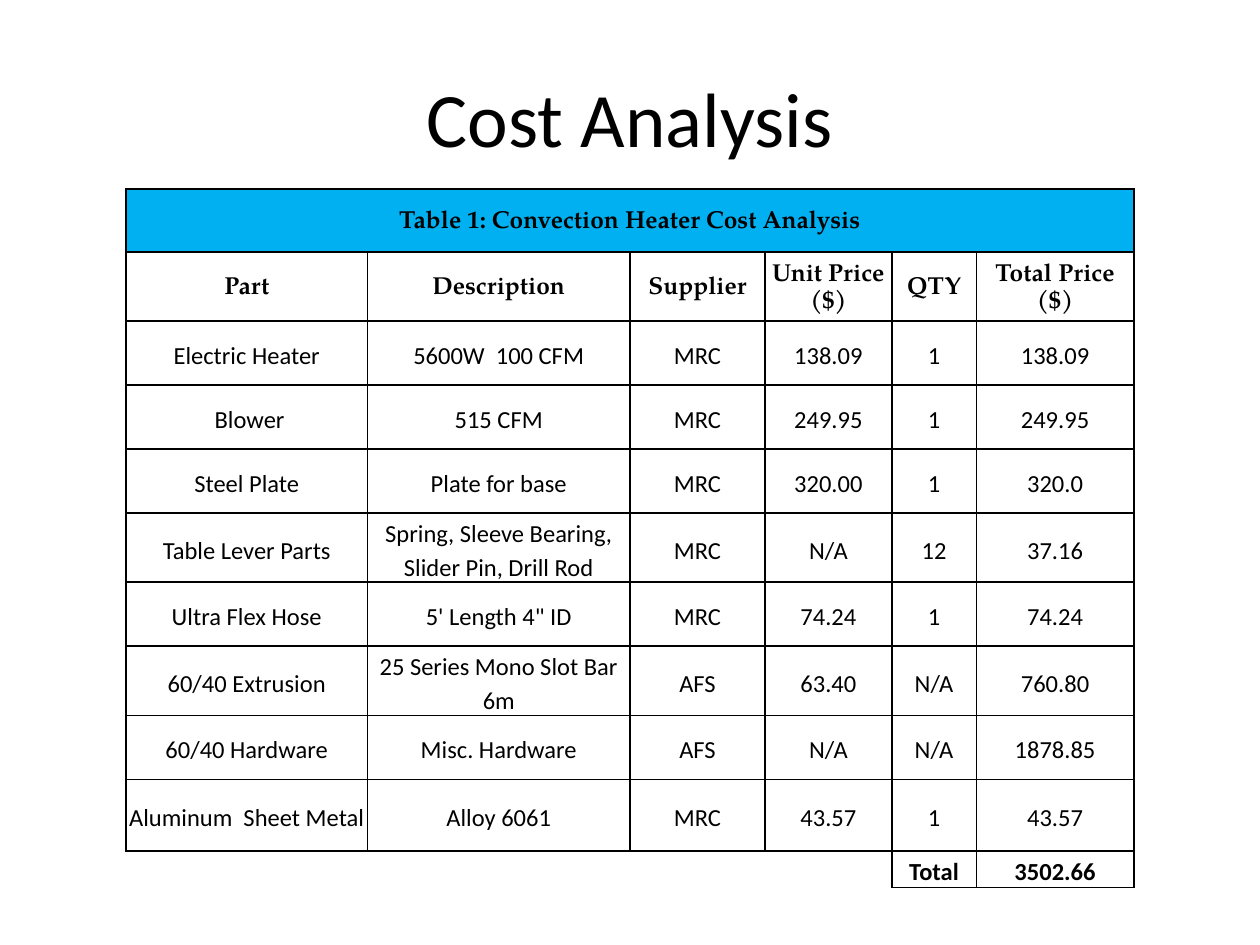
from lxml import etree
from pptx import Presentation
from pptx.dml.color import RGBColor
from pptx.enum import text
from pptx.oxml import ns
from pptx.util import Cm, Pt

BLACK = RGBColor(0x00, 0x00, 0x00)
BLUE = RGBColor(0x00, 0xB0, 0xF0)
SANS, SERIF = "Calibri", "TeX Gyre Pagella"
PLAIN = "{2D5ABB26-0587-4C30-8999-92F81FD0307C}"  # no style, no grid

COLS = [4.87, 5.29, 2.72, 2.56, 1.7, 3.18]
TALL = 1.29
ROWS = [1.27] + [TALL] * 6 + [1.37, TALL, 1.45, 0.73]
DATA = [
    ["Table 1: Convection Heater Cost Analysis"] + [""] * 5,
    ["Part", "Description", "Supplier", "Unit Price ($)", "QTY", "Total Price ($)"],
    ["Electric Heater", "5600W  100 CFM", "MRC", "138.09", "1", "138.09"],
    [" Blower", "515 CFM", "MRC", "249.95", "1", "249.95"],
    ["Steel Plate", "Plate for base", "MRC", "320.00", "1", "320.0"],
    ["Table Lever Parts", "Spring, Sleeve Bearing, Slider Pin, Drill Rod",
     "MRC", "N/A", "12", "37.16"],
    ["Ultra Flex Hose", "5' Length 4\" ID", "MRC", "74.24", "1", "74.24"],
    ["60/40 Extrusion", "25 Series Mono Slot Bar 6m", "AFS", "63.40", "N/A", "760.80"],
    ["60/40 Hardware", "Misc. Hardware", "AFS", "N/A", "N/A", "1878.85"],
    ["Aluminum  Sheet Metal", "Alloy 6061", "MRC", "43.57", "1", "43.57"],
    ["", "", "", "", "Total", "3502.66"],
]
LAST = len(DATA) - 1


def style(para, size, face, bold=False):
    para.alignment = text.PP_ALIGN.CENTER
    for run in para.runs:
        font = run.font
        font.size, font.name, font.bold = Pt(size), face, bold
        font.color.rgb = BLACK


def add_title(slide, words):
    box = slide.shapes.add_textbox(Cm(1.27), Cm(0.76), Cm(22.86), Cm(3.18))
    frame = box.text_frame
    frame.word_wrap = True
    frame.vertical_anchor = text.MSO_ANCHOR.MIDDLE
    frame.text = words
    style(frame.paragraphs[0], 44, SANS)


def set_edges(cell, sides):
    """Draw a thin black line on each of the given sides (of L, R, T, B)."""
    props = cell._tc.get_or_add_tcPr()
    for spot, side in enumerate(sides):
        line = etree.Element(ns.qn(f"a:ln{side}"), w=str(Pt(1)))
        fill = etree.SubElement(line, ns.qn("a:solidFill"))
        etree.SubElement(fill, ns.qn("a:srgbClr"), val=str(BLACK))
        props.insert(spot, line)


def fill_cell(cell, words, row):
    cell.margin_left = cell.margin_right = cell.margin_top = Cm(0.03)
    cell.margin_bottom = 0
    cell.vertical_anchor = text.MSO_ANCHOR.MIDDLE
    cell.text_frame.text = words
    para = cell.text_frame.paragraphs[0]
    if words:
        para.line_spacing = 1.15
        para.space_after = Pt(10)
        style(para, 14, SERIF if row < 2 else SANS, row in (0, 1, LAST))
    else:
        # An empty cell must not force its row taller
        para._p.get_or_add_endParaRPr().set("sz", "1000")


def add_costs(slide):
    frame = slide.shapes.add_table(len(ROWS), len(COLS), Cm(2.54), Cm(3.81),
                                   Cm(sum(COLS)), Cm(sum(ROWS)))
    table = frame.table
    table.first_row = table.horz_banding = False
    table._tbl.tblPr.find(ns.qn("a:tableStyleId")).text = PLAIN
    for col, width in zip(table.columns, COLS):
        col.width = Cm(width)
    for row, height in zip(table.rows, ROWS):
        row.height = Cm(height)
    table.cell(0, 0).merge(table.cell(0, len(COLS) - 1))
    for r, line in enumerate(DATA):
        for c, words in enumerate(line):
            cell = table.cell(r, c)
            fill_cell(cell, words, r)
            if r == 0:
                cell.fill.solid()
                cell.fill.fore_color.rgb = BLUE
            else:
                cell.fill.background()
            if r == LAST and not words:
                set_edges(cell, "RT" if c == 3 else "T")
            else:
                set_edges(cell, "LRTB")


def main():
    deck = Presentation()
    deck.slide_width, deck.slide_height = Cm(25.4), Cm(19.05)
    slide = deck.slides.add_slide(deck.slide_layouts[6])
    add_title(slide, "Cost Analysis")
    add_costs(slide)
    deck.save("out.pptx")


if __name__ == "__main__":
    main()
